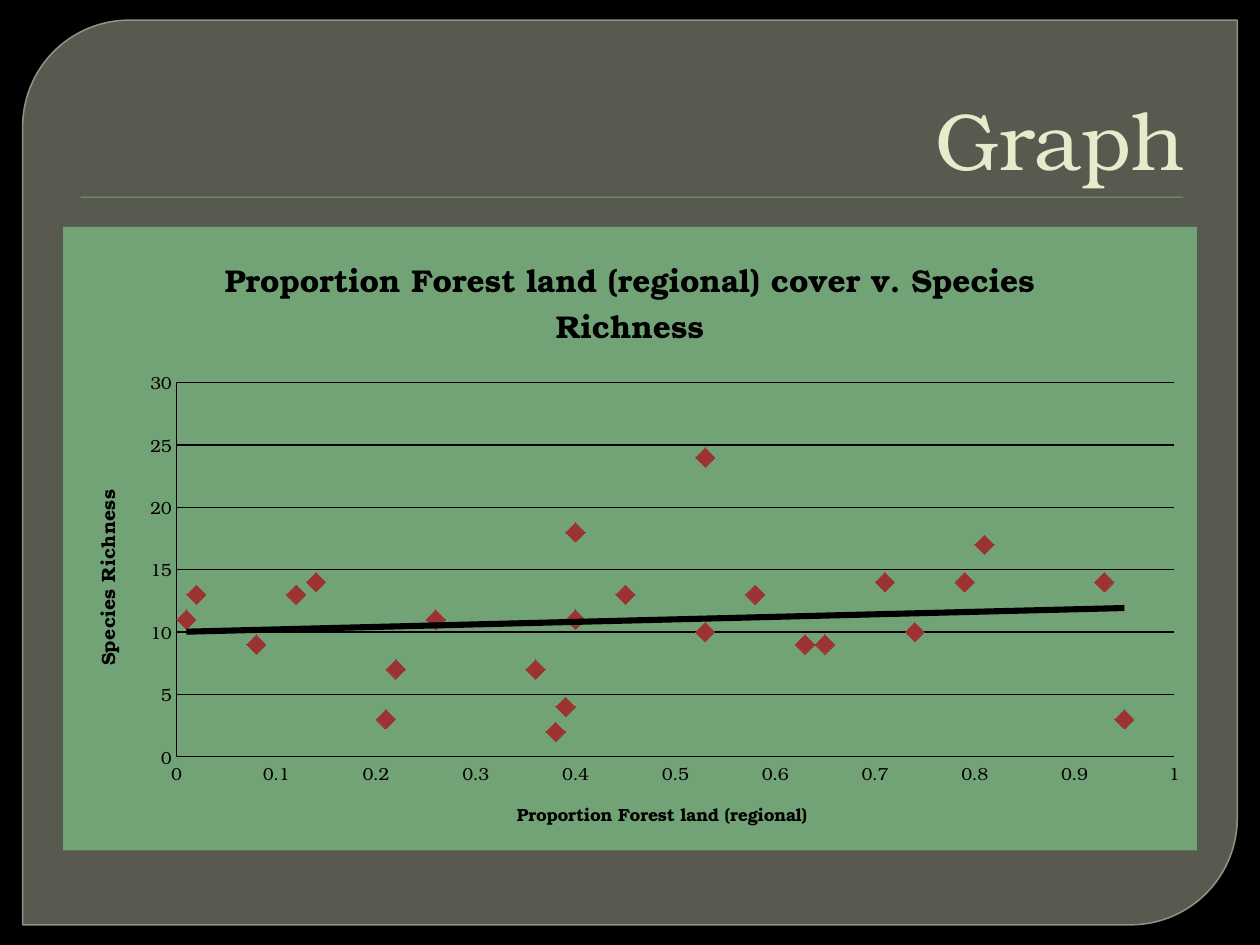
from lxml import etree
from pptx import Presentation
from pptx.chart.data import XyChartData
from pptx.dml.color import RGBColor
from pptx.enum.chart import XL_CHART_TYPE, XL_MARKER_STYLE, XL_TICK_MARK
from pptx.enum.shapes import MSO_SHAPE
from pptx.enum.text import MSO_ANCHOR, PP_ALIGN
from pptx.oxml import parse_xml
from pptx.oxml.ns import qn
from pptx.util import Inches, Pt

SCATTER = XL_CHART_TYPE.XY_SCATTER
DIAMOND = XL_MARKER_STYLE.DIAMOND
NO_TICK = XL_TICK_MARK.NONE
ROUNDED_DIAGONAL = MSO_SHAPE.ROUND_2_DIAG_RECTANGLE
RECTANGLE = MSO_SHAPE.RECTANGLE
RIGHT = PP_ALIGN.RIGHT
BOTTOM = MSO_ANCHOR.BOTTOM

BLACK = RGBColor(0x00, 0x00, 0x00)
PANEL = RGBColor(0x88, 0x8B, 0x7B)
PANEL_EDGE = RGBColor(0x9D, 0xA0, 0x90)
GREEN = RGBColor(0x72, 0xA3, 0x76)
CREAM = RGBColor(0xE7, 0xEA, 0xCB)
RED = RGBColor(0x9D, 0x32, 0x32)

FONT = "TeX Gyre Bonum"
NAMESPACES = (
    'xmlns:a="http://schemas.openxmlformats.org/drawingml/2006/main" '
    'xmlns:c="http://schemas.openxmlformats.org/drawingml/2006/chart"'
)

# Forest proportion, species richness
SITES = [
    (0.95, 3), (0.45, 13), (0.4, 11), (0.26, 11), (0.93, 14),
    (0.01, 11), (0.12, 13), (0.02, 13), (0.71, 14), (0.36, 7),
    (0.65, 9), (0.4, 18), (0.53, 24), (0.22, 7), (0.58, 13),
    (0.74, 10), (0.81, 17), (0.38, 2), (0.21, 3), (0.79, 14),
    (0.08, 9), (0.14, 14), (0.63, 9), (0.53, 10), (0.39, 4),
]


def set_font(font, size, color, bold=False):
    values = {"name": FONT, "size": Pt(size), "bold": bold}
    for attribute, value in values.items():
        setattr(font, attribute, value)
    font.color.rgb = color


def set_alpha(fill_element, percent):
    """Make the solid colour inside a fill or line element translucent."""
    color = fill_element.find(".//" + qn("a:srgbClr"))
    etree.SubElement(color, qn("a:alpha"), val=str(percent * 1000))


deck = Presentation()
deck.slide_width = Inches(10)
deck.slide_height = Inches(7.5)
page = deck.slides.add_slide(deck.slide_layouts[5])
page.background.fill.solid()
page.background.fill.fore_color.rgb = BLACK

# Panel and rule, behind the title
panel = page.shapes.add_shape(
    ROUNDED_DIAGONAL, Inches(0.18), Inches(0.16), Inches(9.64), Inches(7.18))
panel.shadow.inherit = False
panel.adjustments[0] = 0.118
panel.adjustments[1] = 0
panel.fill.solid()
panel.fill.fore_color.rgb = PANEL
set_alpha(panel.element.spPr.find(qn("a:solidFill")), 65)
panel.line.color.rgb = PANEL_EDGE
panel.line.width = Pt(0.87)
set_alpha(panel.element.spPr.find(qn("a:ln")), 88)

rule = page.shapes.add_shape(
    RECTANGLE, Inches(0.64), Inches(1.56), Inches(8.75), Inches(0.01))
rule.shadow.inherit = False
rule.fill.solid()
rule.fill.fore_color.rgb = GREEN
rule.line.fill.background()
rule.element.spPr.find(qn("a:effectLst")).append(parse_xml(
    f'<a:outerShdw {NAMESPACES} blurRad="12700" dist="12700" dir="5400000">'
    '<a:srgbClr val="000000"><a:alpha val="75000"/></a:srgbClr></a:outerShdw>'))

title = page.shapes.title
for shape in (panel, rule):
    title.element.addprevious(shape.element)
title.left, title.top = Inches(0.5), Inches(0.28)
title.width, title.height = Inches(9), Inches(1.25)
title.text_frame.text = "Graph"
title.text_frame.vertical_anchor = BOTTOM
para = title.text_frame.paragraphs[0]
para.alignment = RIGHT
set_font(para.runs[0].font, 46, CREAM)

# Scatter chart
chart_data = XyChartData()
richness = chart_data.add_series("Series 1")
for proportion, species in SITES:
    richness.add_data_point(proportion, species)
chart = page.shapes.add_chart(
    SCATTER, Inches(0.5), Inches(1.8), Inches(9), Inches(4.95), chart_data).chart
chart.has_legend = False
set_font(chart.font, 10, BLACK)

axes = [
    (chart.category_axis, "Proportion Forest land (regional) ", 10, 1, 0.1),
    (chart.value_axis, "Species Richness", 11, 30, 5),
]
headings = [(chart, "Proportion Forest land (regional) cover v. Species Richness", 18)]
for axis, label, size, maximum, step in axes:
    headings.append((axis, label, size))
    settings = {
        "minimum_scale": 0, "maximum_scale": maximum, "major_unit": step,
        "major_tick_mark": NO_TICK, "minor_tick_mark": NO_TICK,
    }
    for attribute, value in settings.items():
        setattr(axis, attribute, value)
    axis.format.line.color.rgb = BLACK
    axis.format.line.width = Pt(0.75)
    set_font(axis.tick_labels.font, 10, BLACK)
    axis.tick_labels.number_format = "General"
    axis.tick_labels.number_format_is_linked = False
chart.category_axis.has_major_gridlines = False
grid_line = chart.value_axis.major_gridlines.format.line
grid_line.color.rgb = BLACK
grid_line.width = Pt(0.75)

for owner, label, size in headings:
    title_frame = owner.chart_title if owner is chart else owner.axis_title
    title_frame.text_frame.text = label
    span = title_frame.text_frame.paragraphs[0].runs[0]
    set_font(span.font, size, BLACK, bold=True)

chart.plots[0].vary_by_categories = False
series = chart.plots[0].series[0]
series.format.line.fill.background()
series.marker.style = DIAMOND
series.marker.size = 11
series.marker.format.fill.solid()
series.marker.format.fill.fore_color.rgb = RED
series.marker.format.line.fill.background()

# Trend line, chart fill and plot position
series_element = chart.element.find(".//" + qn("c:ser"))
series_element.find(qn("c:xVal")).addprevious(parse_xml(
    f'<c:trendline {NAMESPACES}><c:spPr><a:ln w="{Pt(3.5)}"><a:solidFill>'
    f'<a:srgbClr val="{BLACK}"/></a:solidFill></a:ln></c:spPr>'
    '<c:trendlineType val="linear"/><c:dispRSqr val="0"/><c:dispEq val="0"/>'
    '</c:trendline>'))
chart.element.find(qn("c:chart")).addnext(parse_xml(
    f'<c:spPr {NAMESPACES}><a:solidFill><a:srgbClr val="{GREEN}"/></a:solidFill>'
    '<a:ln><a:noFill/></a:ln></c:spPr>'))

plot_area = chart.element.find(".//" + qn("c:plotArea"))
for layout in plot_area.findall(qn("c:layout")):
    plot_area.remove(layout)
position = {"x": 0.1, "y": 0.25, "w": 0.88, "h": 0.6}
position_xml = "".join(f'<c:{key} val="{value}"/>' for key, value in position.items())
plot_area.insert(0, parse_xml(
    f'<c:layout {NAMESPACES}><c:manualLayout><c:layoutTarget val="inner"/>'
    f'<c:xMode val="edge"/><c:yMode val="edge"/>{position_xml}'
    '</c:manualLayout></c:layout>'))

deck.save("out.pptx")
